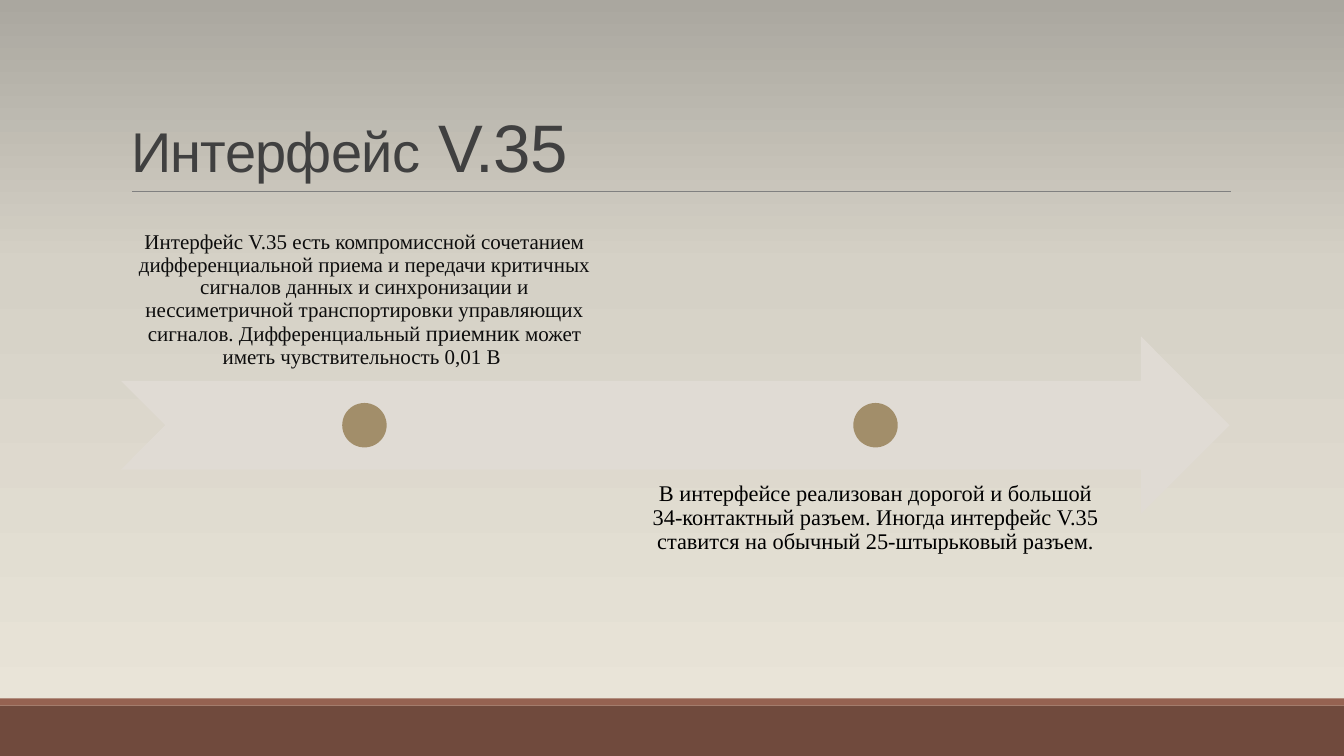
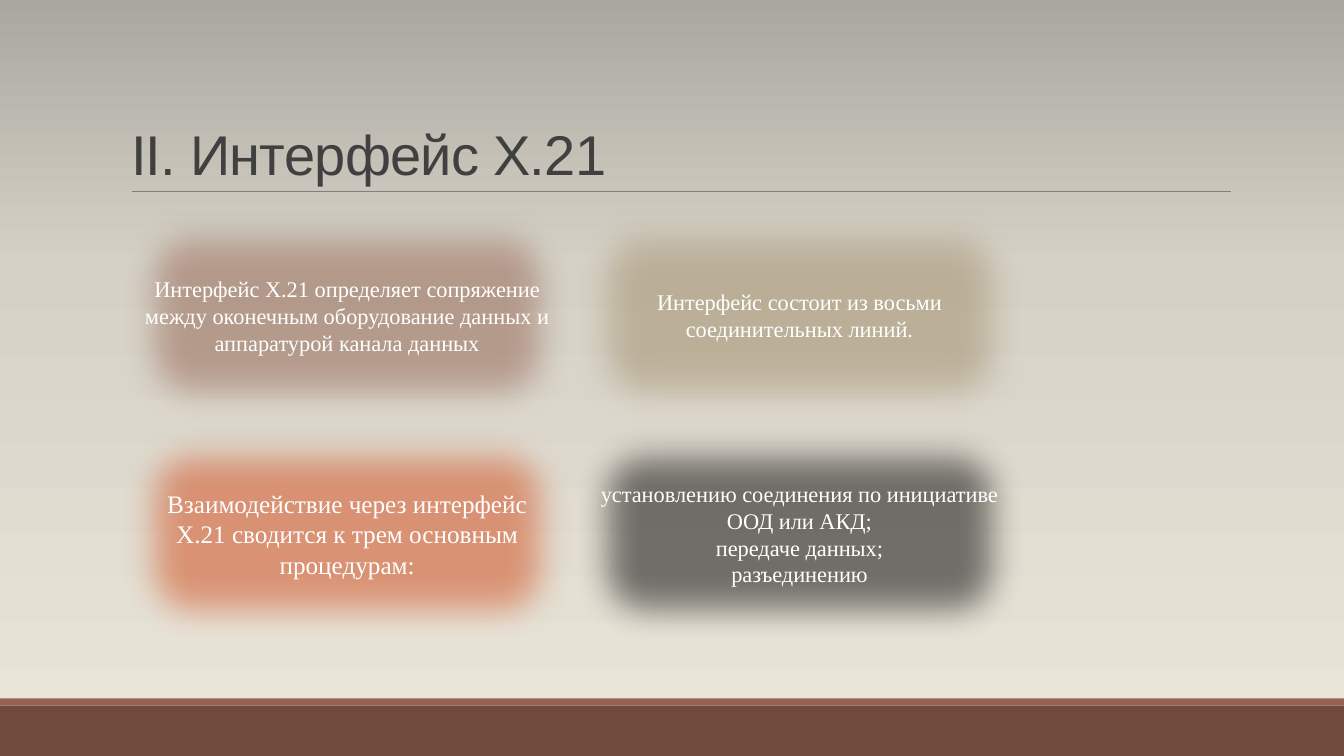
from copy import deepcopy

from pptx import Presentation
from pptx.dml.color import RGBColor
from pptx.enum.shapes import MSO_CONNECTOR, MSO_SHAPE
from pptx.enum.text import MSO_ANCHOR, MSO_AUTO_SIZE, PP_ALIGN
from pptx.oxml.ns import qn
from pptx.util import Cm, Pt
from lxml.etree import SubElement

RECTANGLE = MSO_SHAPE.RECTANGLE
ROUNDED = MSO_SHAPE.ROUNDED_RECTANGLE
NOTCHED_ARROW = MSO_SHAPE.NOTCHED_RIGHT_ARROW
OVAL = MSO_SHAPE.OVAL
STRAIGHT = MSO_CONNECTOR.STRAIGHT
TOP, MIDDLE, BOTTOM = MSO_ANCHOR.TOP, MSO_ANCHOR.MIDDLE, MSO_ANCHOR.BOTTOM
LEFT, CENTER = PP_ALIGN.LEFT, PP_ALIGN.CENTER

BROWN = RGBColor(0x70, 0x4A, 0x3D)
CLAY = RGBColor(0x95, 0x62, 0x51)
SAND = RGBColor(0xA2, 0x8E, 0x6A)
ORANGE = RGBColor(0xD3, 0x48, 0x17)
PALE = RGBColor(0xE0, 0xDB, 0xD4)
GRAY = RGBColor(0x80, 0x80, 0x80)
TITLE_GRAY = RGBColor(0x40, 0x40, 0x40)
INK = RGBColor(0x0D, 0x0D, 0x0D)
BLACK = RGBColor(0, 0, 0)
WHITE = RGBColor(0xFF, 0xFF, 0xFF)
BACKGROUND_STOPS = [
    (0, RGBColor(0xEB, 0xE6, 0xDA)),
    (0.65, RGBColor(0xD5, 0xD1, 0xC6)),
    (1, RGBColor(0xAA, 0xA7, 0x9F)),
]

TITLE_FONT, BODY_FONT = "Arial", "Times New Roman"
SLIDE_WIDTH, SLIDE_HEIGHT = 33.87, 19.05
MARGIN, CONTENT_WIDTH = 3.05, 27.94


class Deck:
    """Holds the shared style and the slide being drawn; lengths are in cm."""

    def __init__(self):
        self.presentation = Presentation()
        self.presentation.slide_width = Cm(SLIDE_WIDTH)
        self.presentation.slide_height = Cm(SLIDE_HEIGHT)
        self.layout = self.presentation.slide_layouts[5]
        self.slide = None
        self.set_background()

    def set_background(self):
        fill = self.layout.background.fill
        fill.gradient()
        fill.gradient_angle = 90
        stop_list = self.layout.element.find(".//" + qn("a:gsLst"))
        stop_list.append(deepcopy(stop_list[-1]))
        for stop, (position, color) in zip(fill.gradient_stops, BACKGROUND_STOPS):
            stop.position = position
            stop.color.rgb = color

    def new_slide(self, title_runs):
        self.slide = self.presentation.slides.add_slide(self.layout)
        self.shape(RECTANGLE, 0, 17.78, SLIDE_WIDTH, 1.27, BROWN)
        self.shape(RECTANGLE, 0, 17.6, SLIDE_WIDTH, 0.18, CLAY)
        self.line(3.33, 4.83, 31.01, 4.83)
        self.title(title_runs)

    def title(self, title_runs):
        title = self.slide.shapes.title
        title.left, title.top = Cm(MARGIN), Cm(0.79)
        title.width, title.height = Cm(CONTENT_WIDTH), Cm(4.04)
        title.text_frame.auto_size = MSO_AUTO_SIZE.NONE
        title.text_frame.vertical_anchor = BOTTOM
        paragraph = title.text_frame.paragraphs[0]
        paragraph.alignment = LEFT
        paragraph.line_spacing = 0.85
        self.runs(paragraph, title_runs, TITLE_FONT, TITLE_GRAY)
        for run in paragraph.runs:
            run.font._element.set("spc", "-50")

    def runs(self, paragraph, sized_texts, font_name, color):
        """Adds one run for each (text, size) pair."""
        for text, size in sized_texts:
            run = paragraph.add_run()
            run.text = text
            run.font.name = font_name
            run.font.size = Pt(size)
            run.font.color.rgb = color

    def line(self, left, top, right, bottom):
        line = self.slide.shapes.add_connector(
            STRAIGHT, Cm(left), Cm(top), Cm(right), Cm(bottom))
        line.line.color.rgb = GRAY
        line.line.width = Pt(0.5)
        SubElement(line._element.spPr, qn("a:effectLst"))

    def shape(self, kind, left, top, width, height, color):
        shape = self.slide.shapes.add_shape(
            kind, Cm(left), Cm(top), Cm(width), Cm(height))
        shape.fill.solid()
        shape.fill.fore_color.rgb = color
        shape.line.fill.background()
        shape.shadow.inherit = False
        return shape

    def text(self, left, top, width, height, sized_texts, color, anchor):
        box = self.slide.shapes.add_textbox(
            Cm(left), Cm(top), Cm(width), Cm(height))
        frame = box.text_frame
        frame.word_wrap = True
        frame.vertical_anchor = anchor
        frame.margin_left = frame.margin_right = Cm(0.3)
        frame.margin_top = frame.margin_bottom = Cm(0.3)
        paragraph = frame.paragraphs[0]
        paragraph.alignment = CENTER
        paragraph.line_spacing = 0.9
        self.runs(paragraph, sized_texts, BODY_FONT, color)

    def soft_card(self, left, top, width, height, color, lines, size):
        """Draws a half-transparent rounded card with blurred edges."""
        card = self.shape(ROUNDED, left, top, width, height, color)
        properties = card._element.spPr
        color_element = properties.find(qn("a:solidFill"))[0]
        SubElement(color_element, qn("a:alpha"), val="50000")
        effects = properties.find(qn("a:effectLst"))
        SubElement(effects, qn("a:softEdge"), rad=str(Pt(25)))
        frame = card.text_frame
        frame.word_wrap = True
        frame.vertical_anchor = MIDDLE
        for index, line in enumerate(lines):
            paragraph = frame.add_paragraph() if index else frame.paragraphs[0]
            paragraph.alignment = CENTER
            self.runs(paragraph, [(line, size)], BODY_FONT, WHITE)


def add_v35_slide(deck):
    deck.new_slide([("Интерфейс", 40), (" V.35", 48)])
    arrow_top, arrow_height = 8.48, 4.47
    deck.shape(NOTCHED_ARROW, MARGIN, arrow_top, CONTENT_WIDTH, arrow_height, PALE)

    text_width, column_step, dot_size = 12.27, 12.88, 1.12
    milestones = [
        (5.13, BOTTOM, INK, [
            ("Интерфейс V.35 есть компромиссной сочетанием дифференциальной "
             "приема и передачи критичных сигналов данных и синхронизации и "
             "нессиметричной транспортировки управляющих сигналов. "
             "Дифференциальный ", 15),
            ("приемник", 16),
            (" может иметь чувствительность 0,01 В ", 15)]),
        (11.84, TOP, BLACK, [
            ("В интерфейсе реализован дорогой и большой 34-контактный разъем. "
             "Иногда интерфейс V.35 ставится на обычный 25-штырьковый разъем.",
             16)]),
    ]
    dot_top = arrow_top + (arrow_height - dot_size) / 2
    for column, (top, anchor, color, sized_texts) in enumerate(milestones):
        left = MARGIN + column * column_step
        deck.text(left, top, text_width, arrow_height, sized_texts, color, anchor)
        dot_left = left + (text_width - dot_size) / 2
        deck.shape(OVAL, dot_left, dot_top, dot_size, dot_size, SAND)


def add_x21_slide(deck):
    deck.new_slide([("II. Интерфейс X.21", 40)])
    width, height, row_step = 11.4, 5.54, 5.5
    cards = [
        (CLAY, 16, ["Интерфейс Х.21 определяет сопряжение между оконечным "
                    "оборудование данных и аппаратурой канала данных"]),
        (SAND, 16, ["Интерфейс состоит из восьми соединительных линий."]),
        (ORANGE, 18, ["Взаимодействие через интерфейс Х.21 сводится к трем "
                      "основным процедурам:"]),
        (BLACK, 16, ["установлению соединения по инициативе ООД или АКД;",
                     "передаче данных;",
                     "разъединению"]),
    ]
    for index, (color, size, lines) in enumerate(cards):
        row, column = divmod(index, 2)
        deck.soft_card(MARGIN + column * width, 5.18 + row * row_step,
                       width, height, color, lines, size)


def main():
    deck = Deck()
    add_v35_slide(deck)
    add_x21_slide(deck)
    deck.presentation.save("out.pptx")


if __name__ == "__main__":
    main()
